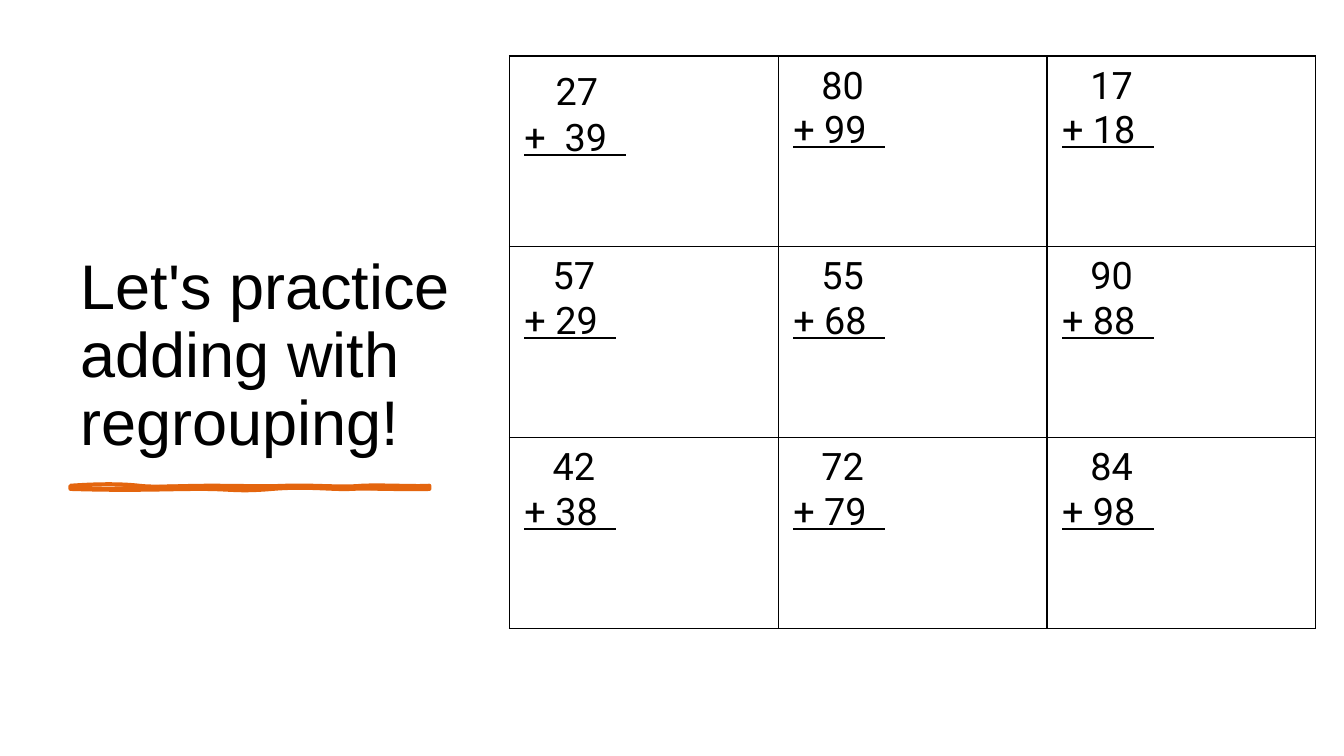
from lxml import etree
from pptx import Presentation
from pptx.dml.color import RGBColor
from pptx.enum.shapes import MSO_SHAPE
from pptx.enum.text import MSO_ANCHOR, MSO_AUTO_SIZE, PP_ALIGN
from pptx.oxml.ns import qn
from pptx.util import Inches, Pt

BLACK = RGBColor(0x00, 0x00, 0x00)
WHITE = RGBColor(0xFF, 0xFF, 0xFF)
ORANGE = RGBColor(0xE4, 0x65, 0x0E)

SLIDE_W, SLIDE_H = Inches(40) // 3, Inches(7.5)
COL_W, ROW_H = SLIDE_W // 5, Inches(5.68) // 3
TABLE_LEFT, TABLE_TOP = int(SLIDE_W * 0.379), int(SLIDE_H * 0.074)
LEFT = Inches(0.7)

SUMS = [
    [("27", "+  39"), ("80", "+ 99"), ("17", "+ 18")],
    [("57", "+ 29"), ("55", "+ 68"), ("90", "+ 88")],
    [("42", "+ 38"), ("72", "+ 79"), ("84", "+ 98")],
]
UNDERLINE_TAIL = "  "

STROKE_OUTLINE = [
    (0.7, 4.82),
    (0.97, 4.8), (1.21, 4.8), (1.38, 4.82),
    (1.55, 4.84), (1.77, 4.82), (2.09, 4.82),
    (2.41, 4.82), (2.6, 4.83), (2.84, 4.82),
    (3.08, 4.81), (3.39, 4.84), (3.59, 4.82),
    (3.79, 4.81), (4.12, 4.83), (4.26, 4.82),
    (4.26, 4.83), (4.26, 4.85), (4.26, 4.85),
    (4.08, 4.86), (3.64, 4.84), (3.48, 4.85),
    (3.32, 4.86), (3.04, 4.82), (2.7, 4.85),
    (2.35, 4.88), (2.31, 4.85), (1.99, 4.85),
    (1.66, 4.85), (1.32, 4.87), (0.7, 4.85),
    (0.7, 4.84), (0.7, 4.83), (0.7, 4.82),
]
STROKE_BODY = [
    (0.7, 4.82),
    (1.02, 4.84), (1.1, 4.83), (1.38, 4.82),
    (1.66, 4.81), (1.69, 4.8), (1.99, 4.82),
    (2.28, 4.84), (2.61, 4.83), (2.77, 4.82),
    (2.93, 4.81), (3.27, 4.85), (3.44, 4.82),
    (3.62, 4.8), (3.97, 4.86), (4.26, 4.82),
    (4.26, 4.84), (4.26, 4.84), (4.26, 4.85),
    (4.12, 4.85), (3.72, 4.88), (3.55, 4.85),
    (3.38, 4.83), (3.09, 4.85), (2.77, 4.85),
    (2.44, 4.85), (2.4, 4.84), (2.16, 4.85),
    (1.93, 4.86), (1.79, 4.84), (1.45, 4.85),
    (1.11, 4.86), (0.92, 4.85), (0.7, 4.85),
    (0.7, 4.84), (0.7, 4.84), (0.7, 4.82),
]


def add_run(p, text, size, font, underline=None):
    r = p.add_run()
    r.text = text
    r.font.size = Pt(size)
    r.font.name = font
    r.font.color.rgb = BLACK
    r.font.underline = underline


def add_backdrop(s):
    sp = s.shapes.add_shape(MSO_SHAPE.RECTANGLE, 0, 0, SLIDE_W, SLIDE_H)
    sp.shadow.inherit = False
    sp.fill.solid()
    sp.fill.fore_color.rgb = WHITE
    sp.line.fill.background()
    s.shapes._spTree.insert(2, sp._element)


def set_title(s, text):
    sp = s.shapes.title
    sp.left, sp.top, sp.width, sp.height = LEFT, LEFT, Inches(3.91), Inches(3.91)
    tf = sp.text_frame
    tf.word_wrap = True
    tf.auto_size = MSO_AUTO_SIZE.NONE
    tf.vertical_anchor = MSO_ANCHOR.BOTTOM
    p = tf.paragraphs[0]
    p.alignment = PP_ALIGN.LEFT
    p.line_spacing = 0.9
    add_run(p, text, 45, "Arial")


def add_curves(path_list, sp, knots, **paint):
    outline = etree.SubElement(path_list, qn("a:path"),
                               w=str(sp.width), h=str(sp.height), **paint)

    def add_segment(tag, points):
        segment = etree.SubElement(outline, qn(tag))
        for x, y in points:
            etree.SubElement(segment, qn("a:pt"),
                             x=str(Inches(x) - sp.left), y=str(Inches(y) - sp.top))

    add_segment("a:moveTo", knots[:1])
    for i in range(1, len(knots), 3):
        add_segment("a:cubicBezTo", knots[i:i + 3])
    etree.SubElement(outline, qn("a:close"))


def add_brush_stroke(s):
    corners = [(Inches(x), Inches(y)) for x, y in STROKE_OUTLINE[::3]]
    builder = s.shapes.build_freeform(*corners[0])
    builder.add_line_segments(corners[1:])
    sp = builder.convert_to_shape()
    sp.shadow.inherit = False
    sp.fill.solid()
    sp.fill.fore_color.rgb = ORANGE
    sp.line.color.rgb = ORANGE
    sp.line.width = Pt(3)
    path_list = next(sp._element.iter(qn("a:pathLst")))
    path_list.remove(path_list[0])
    add_curves(path_list, sp, STROKE_OUTLINE, fill="none")
    add_curves(path_list, sp, STROKE_BODY, stroke="0")


def set_borders(cell):
    tcPr = cell._tc.get_or_add_tcPr()
    for i, side in enumerate(("a:lnL", "a:lnR", "a:lnT", "a:lnB")):
        ln = etree.Element(qn(side), w=str(Pt(1)))
        fill = etree.SubElement(ln, qn("a:solidFill"))
        etree.SubElement(fill, qn("a:srgbClr"), val=str(BLACK))
        tcPr.insert(i, ln)


def fill_cell(cell, top, bottom, first):
    cell.fill.background()
    set_borders(cell)
    cell.margin_left = cell.margin_right = Inches(0.15)
    cell.margin_top = Inches(0.14 if first else 0.08)
    cell.margin_bottom = Inches(0.08)
    tf = cell.text_frame
    p = tf.paragraphs[0]
    p._p.get_or_add_pPr().set("marL", str(Inches(0.31 if first else 0.28)))
    p.space_after = Pt(1.3 if first else 0)
    add_run(p, top, 27, "Roboto")
    add_run(tf.add_paragraph(), bottom + UNDERLINE_TAIL, 27, "Roboto", True)


def add_sums(s, sums):
    rows, cols = len(sums), len(sums[0])
    frame = s.shapes.add_table(rows, cols, TABLE_LEFT, TABLE_TOP,
                               COL_W * cols, ROW_H * rows)
    table = frame.table
    table.first_row = table.horz_banding = False
    for col in table.columns:
        col.width = COL_W
    for r, row in enumerate(sums):
        table.rows[r].height = ROW_H
        for c, (top, bottom) in enumerate(row):
            fill_cell(table.cell(r, c), top, bottom, r == c == 0)


def main():
    prs = Presentation()
    prs.slide_width, prs.slide_height = SLIDE_W, SLIDE_H
    s = prs.slides.add_slide(prs.slide_layouts[5])
    add_backdrop(s)
    set_title(s, "Let's practice adding with regrouping!")
    add_brush_stroke(s)
    add_sums(s, SUMS)
    prs.save("out.pptx")


if __name__ == "__main__":
    main()
